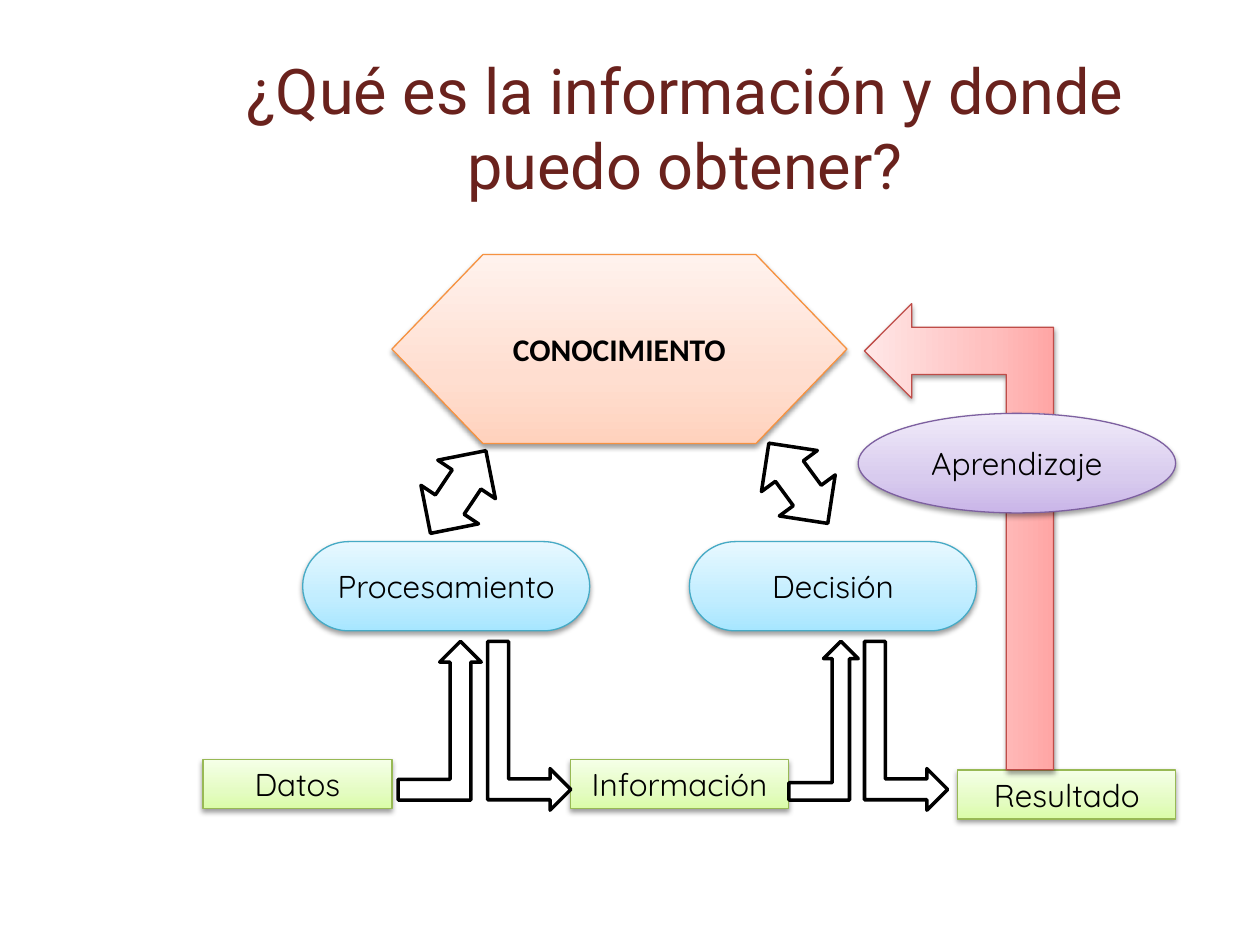
from lxml import etree
from pptx import Presentation
from pptx.dml.color import RGBColor
from pptx.enum.shapes import MSO_SHAPE
from pptx.enum.text import MSO_ANCHOR, PP_ALIGN
from pptx.oxml.ns import qn
from pptx.util import Pt

HEX = MSO_SHAPE.FLOWCHART_PREPARATION
PILL = MSO_SHAPE.FLOWCHART_TERMINATOR
RECT = MSO_SHAPE.FLOWCHART_PROCESS
OVAL = MSO_SHAPE.OVAL
BENT = MSO_SHAPE.BENT_UP_ARROW
TWO_WAY = MSO_SHAPE.UP_DOWN_ARROW
MIDDLE = MSO_ANCHOR.MIDDLE
CENTER = PP_ALIGN.CENTER

COLORS = {"title": "6A221D", "black": "000000", "white": "FFFFFF",
          "orange": "F69240", "blue": "46AAC5", "green": "98B955",
          "red": "BF4C48", "purple": "7D60A0"}
BLENDS = {"orange": ("FFD2BD", "FFDED0", "FFF2ED"),
          "blue": ("A7E6FF", "C1EDFF", "E7F8FF"),
          "green": ("DAFDA7", "E4FCC2", "F5FFE7"),
          "red": ("FFA6A5", "FFC0BF", "FFE7E7"),
          "purple": ("C9B5E8", "D8CBEE", "F0EAF9")}
STOPS = (0, 35, 100)


def rgb(name):
    """Return the named colour."""
    return RGBColor.from_string(COLORS[name])


def write(shape, text, size, font, color, bold=False):
    """Centre one run of text in a shape."""
    frame = shape.text_frame
    frame.word_wrap = True
    frame.vertical_anchor = MIDDLE
    para = frame.paragraphs[0]
    para.alignment = CENTER
    run = para.add_run()
    run.text = text
    run.font.size = Pt(size)
    run.font.name = font
    run.font.bold = bold
    run.font.color.rgb = rgb(color)


def tint(parent, color, alpha=100):
    """Add a colour element with its opacity in percent."""
    node = etree.SubElement(parent, qn("a:srgbClr"), val=color)
    if alpha < 100:
        etree.SubElement(node, qn("a:alpha"), val=str(alpha * 1000))


def blend(shape, tone):
    """Give a shape a three-stop gradient and a soft shadow."""
    shape.fill.gradient()
    shape.fill.gradient_angle = 90
    props = shape.element.spPr
    stops = props.find(qn("a:gradFill")).find(qn("a:gsLst"))
    for old in list(stops):
        stops.remove(old)
    for place, color in zip(STOPS, BLENDS[tone]):
        tint(etree.SubElement(stops, qn("a:gs"), pos=str(place * 1000)), color)
    shadow = etree.SubElement(
        props.find(qn("a:effectLst")), qn("a:outerShdw"),
        blurRad=str(Pt(3.1)), dist=str(Pt(1.6)), dir="5400000", rotWithShape="0")
    tint(shadow, COLORS["black"], 38)


def draw(slide, kind, box, tone=None, turn=0):
    """Add a toned shape, or a white one with a black outline."""
    shape = slide.shapes.add_shape(kind, *map(Pt, box))
    shape.rotation = turn
    shape.line.color.rgb = rgb(tone or "black")
    shape.line.width = Pt(0.75 if tone else 2)
    shape.shadow.inherit = False
    if tone:
        blend(shape, tone)
    else:
        shape.fill.solid()
        shape.fill.fore_color.rgb = rgb("white")
    return shape


def head(slide, box):
    """Place the title."""
    area = slide.shapes.add_textbox(*map(Pt, box))
    write(area, "¿Qué es la información y donde puedo obtener?",
          36, "Roboto", "title")


def nodes(slide, left, top):
    """Place the labelled steps of the cycle."""
    steps = (
        ("CONOCIMIENTO", HEX, 108, 0, 260, 108, "orange"),
        ("Procesamiento", PILL, 57, 164, 164, 51, "blue"),
        ("Decisión", PILL, 278, 164, 164, 51, "blue"),
        ("Datos", RECT, 0, 288.7, 108, 28, "green"),
        ("Información", RECT, 210, 288.7, 124.6, 28, "green"),
        ("Resultado", RECT, 431.3, 294.5, 124.6, 28, "green"))
    for text, kind, x, y, wide, high, tone in steps:
        shape = draw(slide, kind, (left + x, top + y, wide, high), tone)
        main = kind == HEX
        write(shape, text, 18, "Calibri" if main else "Quicksand", "black", main)


def arrows(slide, left, top):
    """Place the outlined arrows between the steps."""
    links = (
        (BENT, 111.5, 221, 47.5, 90.7, 0),
        (BENT, 334.8, 221, 39.6, 90.7, 0),
        (BENT, 138.2, 245.5, 96.5, 47.5, 90),
        (BENT, 353.5, 245.5, 96.5, 47.5, 90),
        (TWO_WAY, 126, 107.2, 39.6, 56.9, 33.8),
        (TWO_WAY, 320.4, 102.2, 39.6, 56.9, 323.7))
    for kind, x, y, wide, high, turn in links:
        draw(slide, kind, (left + x, top + y, wide, high), turn=turn)


def learn(slide, left, top):
    """Place the feedback arrow and its label."""
    draw(slide, BENT, (left + 298.8, top + 107.2, 266.4, 108), "red", 270)
    oval = draw(slide, OVAL, (left + 374.4, top + 90.7, 181.4, 56.9), "purple")
    write(oval, "Aprendizaje", 18, "Quicksand", "black")


def main():
    """Build and save the slide."""
    deck = Presentation()
    deck.slide_width, deck.slide_height = Pt(720), Pt(540)
    slide = deck.slides.add_slide(deck.slide_layouts[6])
    head(slide, (116, 27.4, 550.8, 90))
    for part in (nodes, arrows, learn):
        part(slide, 116, 145.5)
    deck.save("out.pptx")


if __name__ == "__main__":
    main()
